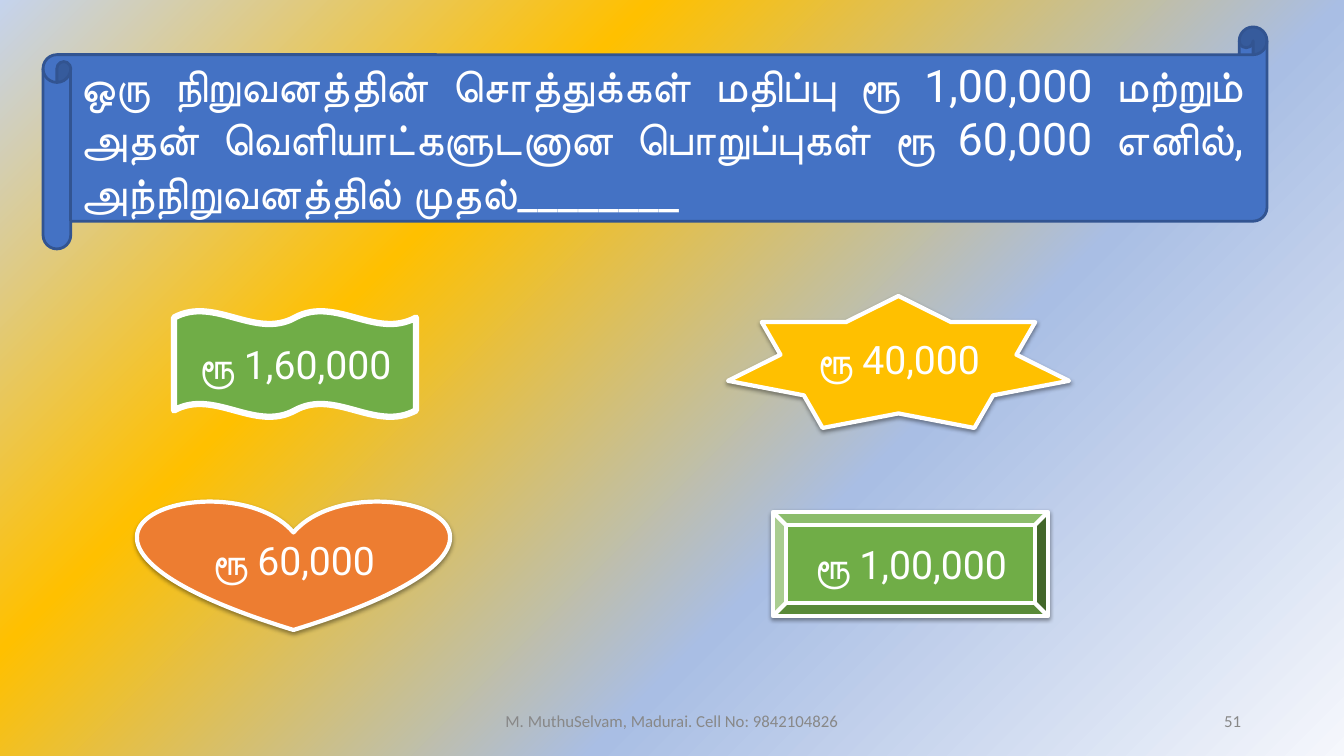
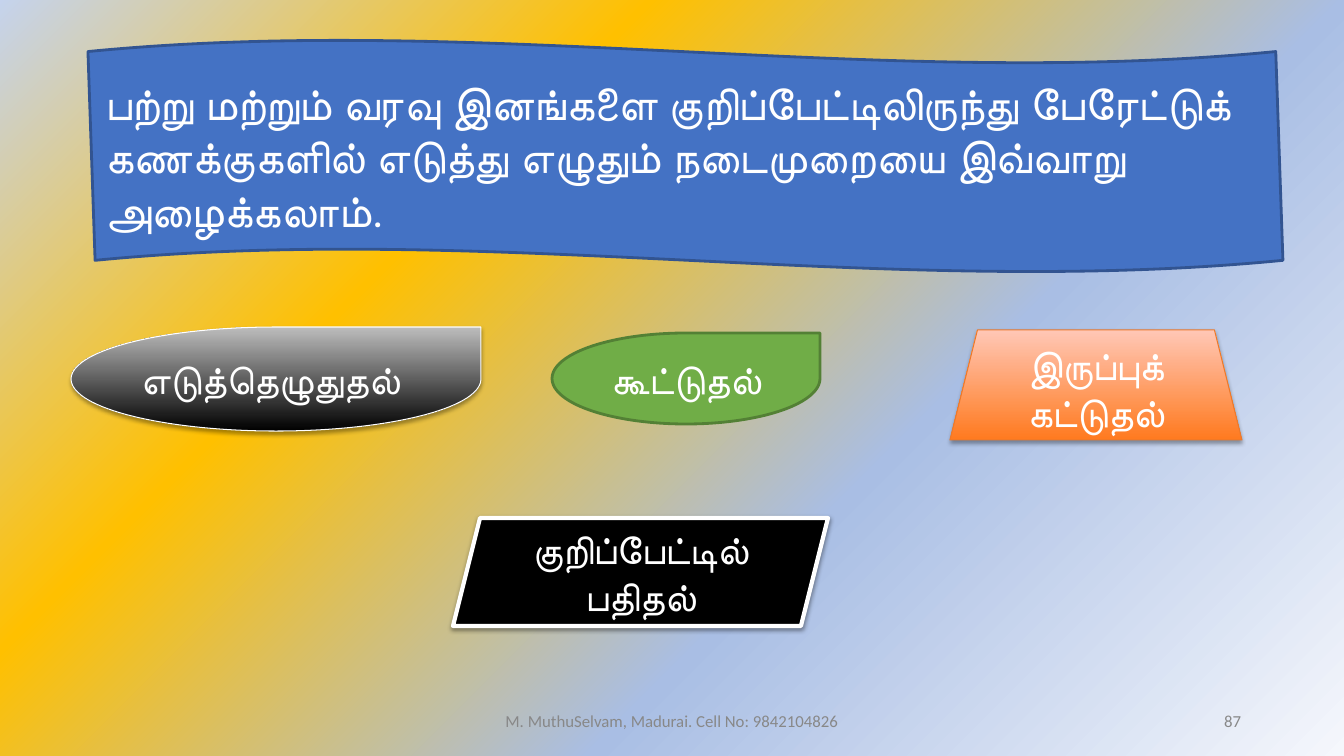
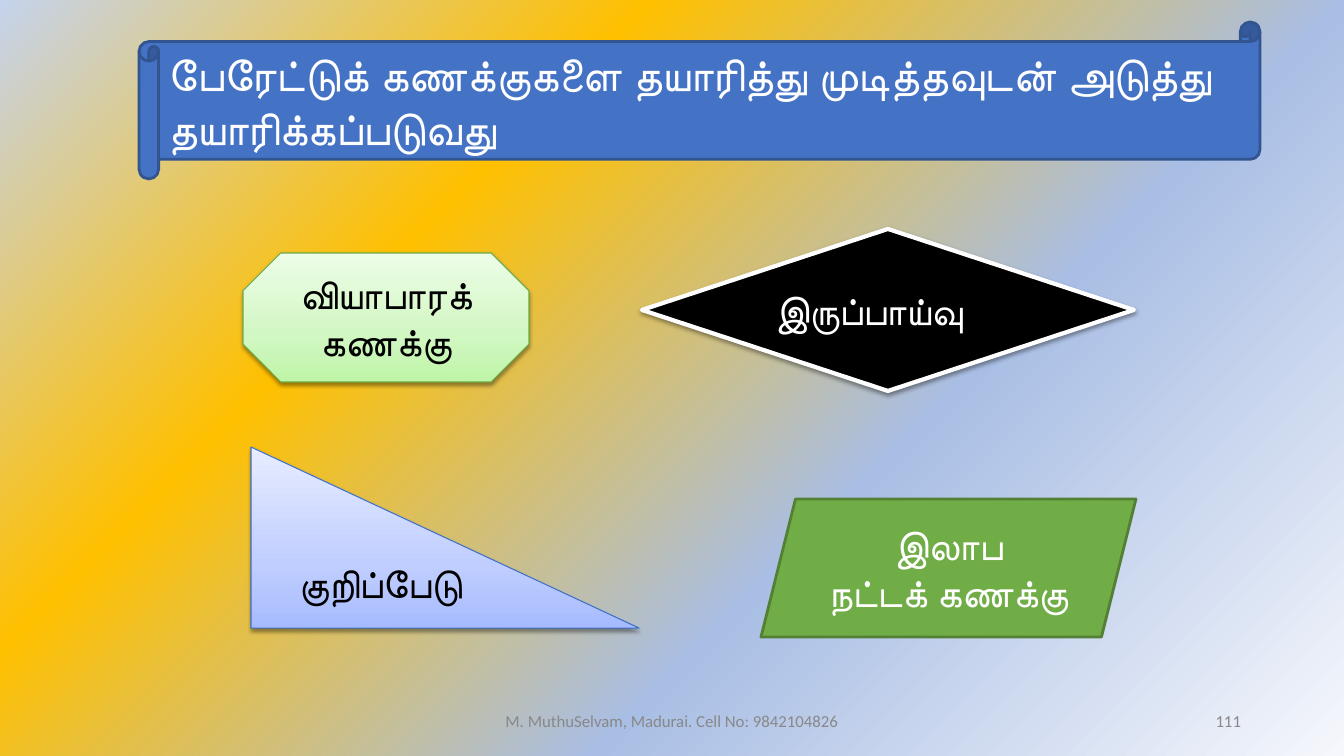
from lxml import etree
from pptx import Presentation
from pptx.dml.color import RGBColor
from pptx.enum.shapes import MSO_SHAPE
from pptx.enum.text import MSO_ANCHOR, PP_ALIGN
from pptx.oxml.ns import qn
from pptx.util import Emu, Pt

LEFT, CENTER, RIGHT, JUSTIFY = PP_ALIGN.LEFT, PP_ALIGN.CENTER, PP_ALIGN.RIGHT, PP_ALIGN.JUSTIFY
MIDDLE = MSO_ANCHOR.MIDDLE
SCROLL, WAVE, DOUBLE_WAVE = MSO_SHAPE.HORIZONTAL_SCROLL, MSO_SHAPE.WAVE, MSO_SHAPE.DOUBLE_WAVE
HEART, STAR, BEVEL, TEARDROP = MSO_SHAPE.HEART, MSO_SHAPE.STAR_7_POINT, MSO_SHAPE.BEVEL, MSO_SHAPE.TEAR
TRAPEZOID, PARALLELOGRAM = MSO_SHAPE.TRAPEZOID, MSO_SHAPE.PARALLELOGRAM
OCTAGON, DIAMOND, TRIANGLE = MSO_SHAPE.OCTAGON, MSO_SHAPE.DIAMOND, MSO_SHAPE.RIGHT_TRIANGLE

# Shared design
SLIDE_W, SLIDE_H = 1344, 756
EMU_PER_PX = 12192000 / SLIDE_W
WHITE, BLACK, GREEN, ORANGE, GOLD, BLUE = "FFFFFF", "000000", "70AD47", "ED7D31", "FFC000", "4472C4"
BACKGROUND = [(0, "F5F7FC"), (36, "A9BEE4"), (69, GOLD), (100, "C5D3ED")]
FOOTER = "M. MuthuSelvam, Madurai. Cell No: 9842104826"
FOOTER_BOX, NUMBER_BOX = (445, 701, 454, 40), (949, 701, 302, 40)

QUESTION_FONT = {"size": Pt(32), "name": "Roboto"}
ANSWER_FONT = {"size": Pt(28), "name": "Roboto"}
FOOTER_FONT = {"size": Pt(12), "name": "Calibri"}

# Shadow: opacity %, blur pt, distance pt
SOFT, LIGHT = (38, 3.1, 1.6), (35, 3.1, 1.8)

# Look: fill (colour or gradient stops), line colour, line width, shadow, text colour
LOOKS = {
    "question": (BLUE, "325491", 2, None, WHITE),
    "orange": (ORANGE, WHITE, 3, SOFT, WHITE),
    "gold": (GOLD, WHITE, 3, SOFT, WHITE),
    "green": (GREEN, WHITE, 3, SOFT, WHITE),
    "green thick": (GREEN, WHITE, 4.5, None, WHITE),
    "green outlined": (GREEN, "538035", 2, None, WHITE),
    "black": (BLACK, WHITE, 3, SOFT, WHITE),
    "black fade": ([(0, BLACK), (100, "BDBDBD")], WHITE, 0.75, LIGHT, WHITE),
    "orange fade": ([(0, "FF7A1F"), (100, "FFC7B6")], "EC792B", 0.75, LIGHT, WHITE),
    "green fade": ([(0, "BEF5A7"), (35, "D1F7C2"), (100, "EDFDE7")], "6DAC43", 0.75, SOFT, BLACK),
    "blue fade": ([(0, "A6BBFF"), (35, "C0CEFF"), (100, "E7ECFF")], "3F6FC3", 0.75, SOFT, BLACK),
}

# Content: question is (preset, box, align, text, adjustments);
# each answer is (preset, box, look, align, text, bold)
SLIDES = [
    {
        "number": "51",
        "question": (SCROLL, (43, 27, 1224, 222), JUSTIFY,
                     "ஒரு நிறுவனத்தின் சொத்துக்கள் மதிப்பு ரூ 1,00,000 மற்றும் அதன் "
                     "வெளியாட்களுடனான பொறுப்புகள் ரூ 60,000 எனில், அந்நிறுவனத்தில் முதல்________", ()),
        "answers": [
            (HEART, (138, 500, 311, 130), "orange", CENTER, "ரூ 60,000", False),
            (STAR, (728, 296, 341, 132), "gold", CENTER, "ரூ 40,000", False),
            (BEVEL, (773, 512, 275, 104), "green", CENTER, "ரூ 1,00,000", False),
            (DOUBLE_WAVE, (174, 311, 242, 106), "green thick", CENTER, "ரூ 1,60,000", False),
        ],
    },
    {
        "number": "87",
        # A flat wave leaves room for three lines between its edges
        "question": (WAVE, (88, 40, 1195, 232), LEFT,
                     "பற்று மற்றும் வரவு இனங்களை குறிப்பேட்டிலிருந்து பேரேட்டுக் கணக்குகளில் "
                     "எடுத்து எழுதும் நடைமுறையை இவ்வாறு அழைக்கலாம்.", (0.05, 0.003)),
        "answers": [
            (TEARDROP, (71, 327, 410, 104), "black fade", LEFT, "எடுத்தெழுதுதல்", False),
            (TRAPEZOID, (950, 330, 292, 110), "orange fade", CENTER, "இருப்புக் கட்டுதல்", False),
            (PARALLELOGRAM, (453, 518, 375, 108), "black", CENTER, "குறிப்பேட்டில் பதிதல்", False),
            (TEARDROP, (552, 333, 268, 91), "green outlined", CENTER, "கூட்டுதல்", False),
        ],
    },
    {
        "number": "111",
        "question": (SCROLL, (139, 22, 1121, 157), LEFT,
                     "பேரேட்டுக் கணக்குகளை தயாரித்து முடித்தவுடன் அடுத்து தயாரிக்கப்படுவது", ()),
        "answers": [
            (OCTAGON, (243, 253, 286, 129), "green fade", CENTER, "வியாபாரக் கணக்கு", False),
            (DIAMOND, (642, 229, 492, 162), "black", LEFT, "இருப்பாய்வு", True),
            (TRIANGLE, (251, 447, 388, 181), "blue fade", CENTER, "குறிப்பேடு", False),
            (PARALLELOGRAM, (761, 499, 375, 138), "green outlined", CENTER,
             "இலாப\nநட்டக் கணக்கு", False),
        ],
    },
]


def px(value):
    return Emu(round(value * EMU_PER_PX))


def rgb(value):
    return RGBColor.from_string(value)


def add(parent, tag, **attributes):
    values = {key: str(value) for key, value in attributes.items()}
    return etree.SubElement(parent, qn(tag), values)


def fill_gradient(fill, owner, stops, from_corner=False):
    """Fill with stops that run upwards, or outwards from the lower right corner."""
    fill.gradient()
    gradient = owner.find(".//" + qn("a:gradFill"))
    for child in list(gradient):
        gradient.remove(child)
    stop_list = add(gradient, "a:gsLst")
    for position, colour in stops:
        add(add(stop_list, "a:gs", pos=position * 1000), "a:srgbClr", val=colour)
    if from_corner:
        add(add(gradient, "a:path", path="circle"), "a:fillToRect", l=100000, t=100000)
        add(gradient, "a:tileRect", r=-100000, b=-100000)
    else:
        add(gradient, "a:lin", ang=270 * 60000, scaled=0)


def write(frame, text, align, colour, font_values):
    frame.word_wrap = True
    frame.vertical_anchor = MIDDLE
    frame.text = text
    for paragraph in frame.paragraphs:
        paragraph.alignment = align
        for run in paragraph.runs:
            for key, value in font_values.items():
                setattr(run.font, key, value)
            run.font.color.rgb = rgb(colour)


def add_card(slide, preset, box, look, align, text, font_values, adjustments=()):
    fill, line_colour, line_width, shadow, text_colour = LOOKS[look]
    card = slide.shapes.add_shape(preset, *map(px, box))
    for index, value in enumerate(adjustments):
        card.adjustments[index] = value
    if isinstance(fill, str):
        card.fill.solid()
        card.fill.fore_color.rgb = rgb(fill)
    else:
        fill_gradient(card.fill, card.element, fill)
    card.line.color.rgb = rgb(line_colour)
    card.line.width = Pt(line_width)
    card.shadow.inherit = False
    if shadow:
        opacity, blur, distance = shadow
        outer = add(card.element.find(".//" + qn("a:effectLst")), "a:outerShdw",
                    blurRad=Pt(blur), dist=Pt(distance), dir=90 * 60000, rotWithShape=0)
        add(add(outer, "a:srgbClr", val=BLACK), "a:alpha", val=opacity * 1000)
    write(card.text_frame, text, align, text_colour, font_values)


def add_footer(slide, number):
    for box, align, text in ((FOOTER_BOX, CENTER, FOOTER), (NUMBER_BOX, RIGHT, number)):
        footer = slide.shapes.add_textbox(*map(px, box))
        write(footer.text_frame, text, align, "888888", FOOTER_FONT)


def main():
    deck = Presentation()
    deck.slide_width, deck.slide_height = px(SLIDE_W), px(SLIDE_H)
    master = deck.slide_master
    fill_gradient(master.background.fill, master.element, BACKGROUND, from_corner=True)

    for content in SLIDES:
        slide = deck.slides.add_slide(deck.slide_layouts[6])
        preset, box, align, text, adjustments = content["question"]
        add_card(slide, preset, box, "question", align, text, QUESTION_FONT, adjustments)
        for preset, box, look, align, text, bold in content["answers"]:
            add_card(slide, preset, box, look, align, text, {**ANSWER_FONT, "bold": bold})
        add_footer(slide, content["number"])

    deck.save("out.pptx")


if __name__ == "__main__":
    main()
